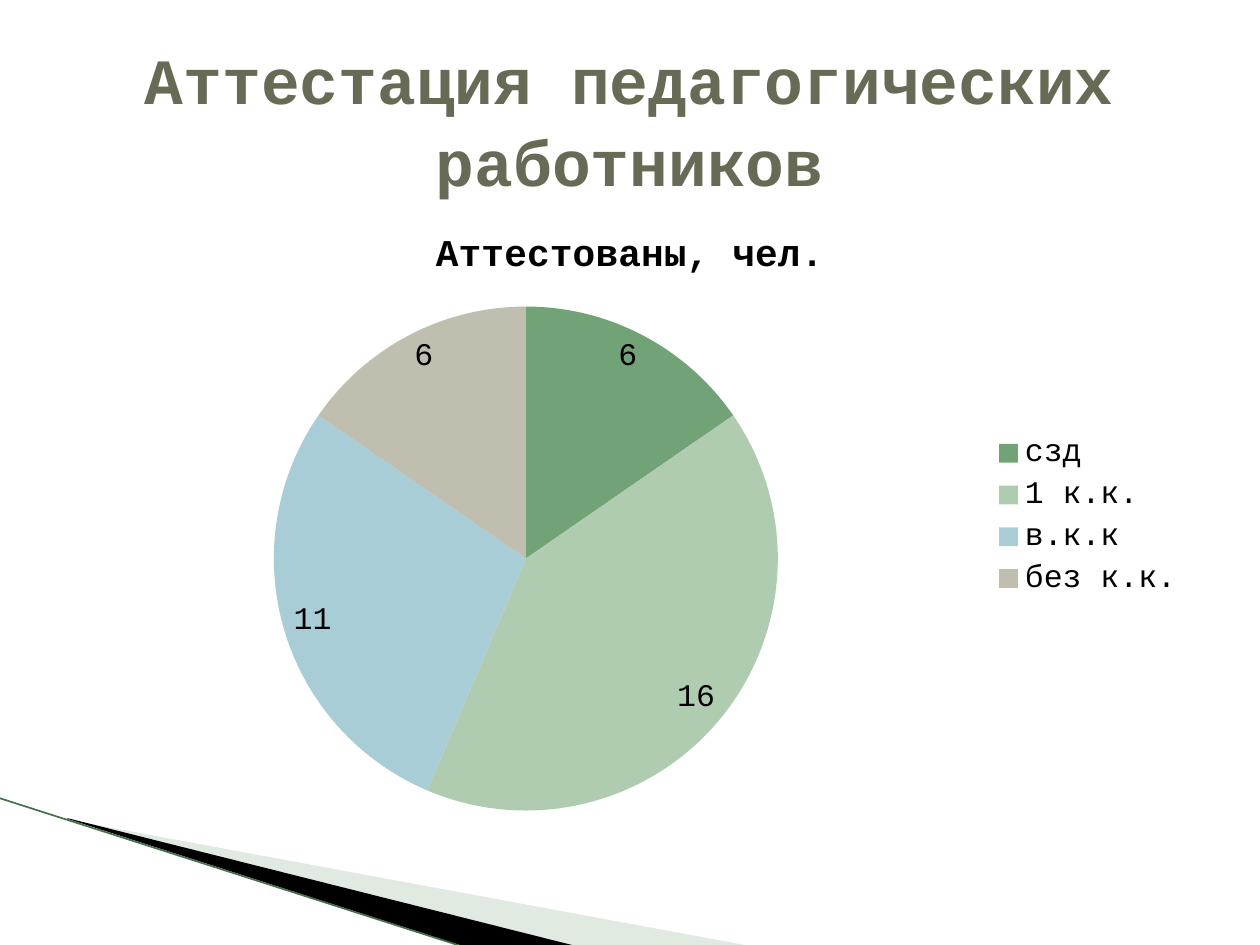
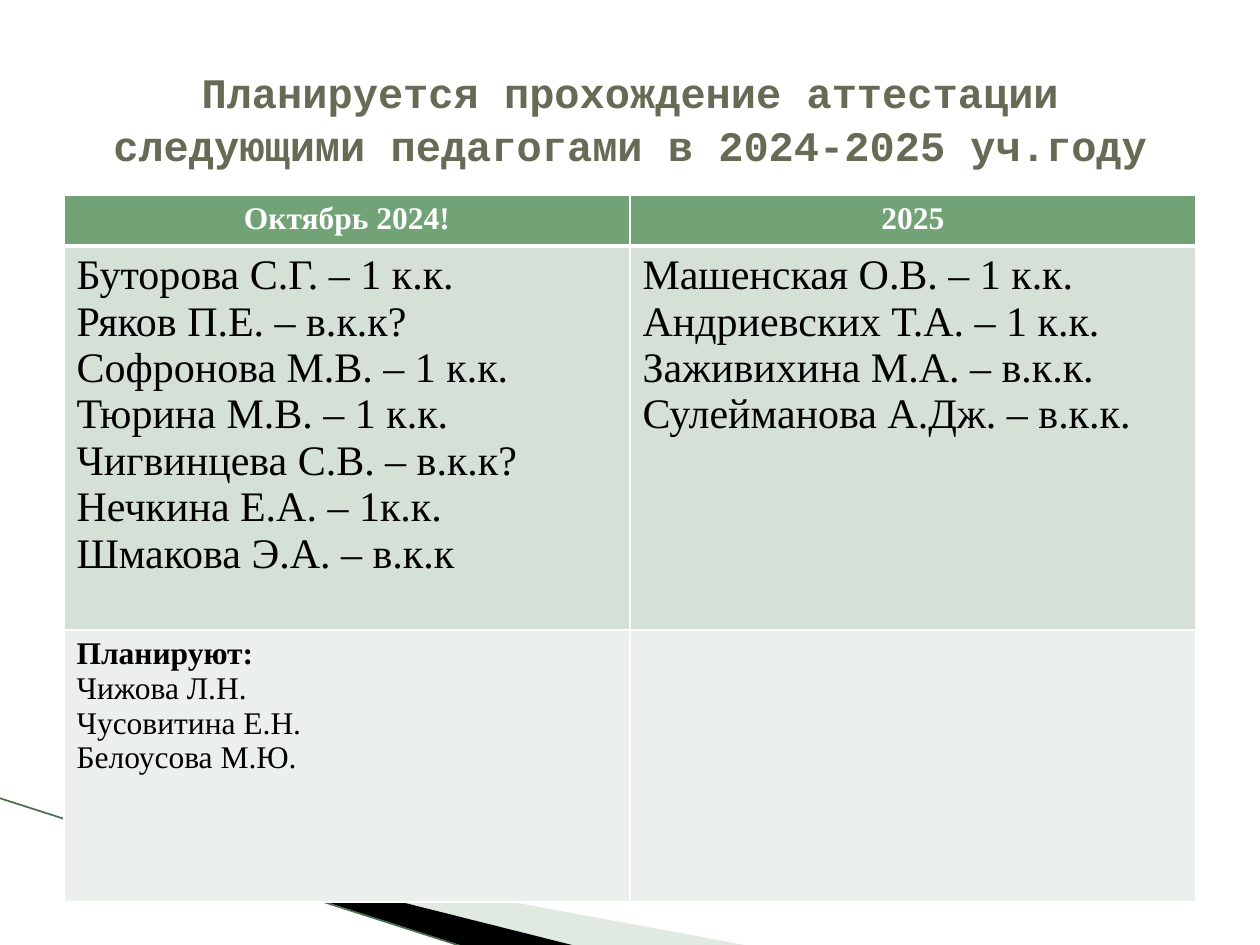
import dataclasses

import lxml.etree
import pptx
import pptx.chart.data
import pptx.dml.color
import pptx.enum.chart
import pptx.enum.text
import pptx.oxml.ns
import pptx.util

PX = 914400 / 126
ALIGN = pptx.enum.text.PP_ALIGN
qn = pptx.oxml.ns.qn


@dataclasses.dataclass(frozen=True)
class Theme:
    mono: str = "Courier New"
    serif: str = "Times New Roman"
    title: str = "676A55"
    text: str = "000000"
    white: str = "FFFFFF"
    green: str = "72A376"
    row_dark: str = "D5E0D6"
    row_light: str = "EBF0EC"
    wedge: str = "B3CBB5"
    edge: str = "45704A"
    slices: tuple = ("72A376", "B0CCB0", "A8CDD7", "C0BEAF")
    big: float = 36.9
    head: int = 24
    body: int = 18
    chart_title: float = 21.6


def px(n):
    return pptx.util.Emu(round(n * PX))


def rgb(color):
    return pptx.dml.color.RGBColor.from_string(color)


def sub(parent, tag, **attrs):
    return lxml.etree.SubElement(parent, qn(tag), attrs)


def set_attrs(obj, **values):
    for name, value in values.items():
        setattr(obj, name, value)


def set_font(font, name, size, color, bold=False):
    set_attrs(font, name=name, size=pptx.util.Pt(size), bold=bold)
    font.color.rgb = rgb(color)


class Deck:
    def __init__(self, theme):
        self.theme = theme
        self.prs = pptx.Presentation()
        set_attrs(self.prs, slide_width=px(1260), slide_height=px(945))

    def slide(self, title, size):
        t = self.theme
        self.s = self.prs.slides.add_slide(self.prs.slide_layouts[5])
        self.wedge([(69, 820), (750, 946), (575, 946), (69, 819)], t.wedge, 40)
        self.wedge([(67, 818), (576, 946), (469, 948), (68, 819)], t.text)
        self.line((-1, 798), (467, 948), t.edge, 0.95)
        sp = self.s.shapes.title
        set_attrs(sp, left=px(63), top=px(38), width=px(1134), height=px(158))
        tf = sp.text_frame
        set_attrs(tf, text=title, word_wrap=True,
                  auto_size=pptx.enum.text.MSO_AUTO_SIZE.NONE,
                  vertical_anchor=pptx.enum.text.MSO_ANCHOR.MIDDLE)
        p = tf.paragraphs[0]
        set_attrs(p, alignment=ALIGN.CENTER, line_spacing=1.06)
        set_font(p.runs[0].font, t.mono, size, t.title, True)

    def wedge(self, points, color, alpha=100):
        fb = self.s.shapes.build_freeform(*points[0], scale=PX)
        fb.add_line_segments(points[1:])
        sp = fb.convert_to_shape()
        sp.shadow.inherit = False
        sp.line.fill.background()
        sp.fill.solid()
        sp.fill.fore_color.rgb = rgb(color)
        if alpha < 100:
            clr = sp.fill._xPr.find(".//" + qn("a:srgbClr"))
            sub(clr, "a:alpha", val=str(alpha * 1000))

    def line(self, start, end, color, width):
        ends = [px(n) for n in start + end]
        ln = self.s.shapes.add_connector(
            pptx.enum.shapes.MSO_CONNECTOR.STRAIGHT, *ends)
        ln.line.color.rgb = rgb(color)
        ln.line.width = pptx.util.Pt(width)
        sub(ln._element.spPr, "a:effectLst")

    def pie(self, box, title, cats, vals):
        t = self.theme
        data = pptx.chart.data.CategoryChartData()
        data.categories = cats
        data.add_series(title, vals)
        chart = self.s.shapes.add_chart(
            pptx.enum.chart.XL_CHART_TYPE.PIE, *map(px, box), data).chart
        set_font(chart.font, t.mono, t.body, t.text)
        set_attrs(chart, has_title=True, has_legend=True)
        tf = chart.chart_title.text_frame
        tf.text = title
        set_font(tf.paragraphs[0].runs[0].font, t.mono, t.chart_title, t.text, True)
        set_attrs(chart.legend, include_in_layout=False,
                  position=pptx.enum.chart.XL_LEGEND_POSITION.RIGHT)
        plot = chart.plots[0]
        set_attrs(plot, vary_by_categories=True, has_data_labels=True)
        set_attrs(plot.data_labels, show_value=True, show_percentage=False,
                  position=pptx.enum.chart.XL_LABEL_POSITION.BEST_FIT)
        set_font(plot.data_labels.font, t.mono, t.body, t.text)
        for i, color in enumerate(t.slices):
            fill = plot.series[0].points[i].format.fill
            fill.solid()
            fill.fore_color.rgb = rgb(color)

    def table(self, left, top, widths, heights, rows, styles):
        shape = self.s.shapes.add_table(
            len(rows), len(widths), px(left), px(top),
            px(sum(widths)), px(sum(heights)))
        tbl = shape.table
        tbl.horz_banding = False
        for col, width in zip(tbl.columns, widths):
            col.width = px(width)
        for i, (row, height) in enumerate(zip(tbl.rows, heights)):
            row.height = px(height)
            for cell, lines in zip(row.cells, rows[i]):
                self.cell(cell, lines, **styles[i])
                self.borders(cell, top=3 if i == 1 else 1, bottom=3 if i == 0 else 1)

    def cell(self, cell, lines, fill, size, color, align, bold_first):
        cell.fill.solid()
        cell.fill.fore_color.rgb = rgb(fill)
        tf = cell.text_frame
        tf.text = "\n".join(lines)
        for i, p in enumerate(tf.paragraphs):
            p.alignment = align
            for r in p.runs:
                set_font(r.font, self.theme.serif, size, color, bold_first and i == 0)

    def borders(self, cell, top, bottom):
        tcPr = cell._tc.get_or_add_tcPr()
        sides = {"a:lnL": 1, "a:lnR": 1, "a:lnT": top, "a:lnB": bottom}
        for i, (tag, width) in enumerate(sides.items()):
            ln = sub(tcPr, tag, w=str(width * 12700))
            sub(sub(ln, "a:solidFill"), "a:srgbClr", val=self.theme.white)
            tcPr.insert(i, ln)


def main():
    t = Theme()
    deck = Deck(t)

    deck.slide("Аттестация педагогических работников", t.big)
    deck.pie((63, 204, 1134, 624), "Аттестованы, чел.",
             ["сзд", "1 к.к.", "в.к.к", "без к.к."], [6, 16, 11, 6])

    deck.slide("Планируется прохождение аттестации следующими педагогами "
               "в 2024-2025 уч.году", t.head)
    october = ["Буторова С.Г. – 1 к.к.", "Ряков П.Е. – в.к.к?",
               "Софронова М.В. – 1 к.к.", "Тюрина М.В. – 1 к.к.",
               "Чигвинцева С.В. – в.к.к?", "Нечкина Е.А. – 1к.к.",
               "Шмакова Э.А. – в.к.к"]
    next_year = ["Машенская О.В. – 1 к.к.", "Андриевских Т.А. – 1 к.к.",
                 "Заживихина М.А. – в.к.к.", "Сулейманова А.Дж. – в.к.к."]
    planning = ["Планируют:", "Чижова Л.Н.", "Чусовитина Е.Н.", "Белоусова М.Ю."]
    rows = [(["Октябрь 2024!"], ["2025"]), (october, next_year), (planning, [])]
    styles = [
        dict(fill=t.green, size=t.body, color=t.white, align=ALIGN.CENTER, bold_first=True),
        dict(fill=t.row_dark, size=t.head, color=t.text, align=ALIGN.LEFT, bold_first=False),
        dict(fill=t.row_light, size=t.body, color=t.text, align=ALIGN.LEFT, bold_first=True),
    ]
    deck.table(64, 195, [566, 566], [51, 384, 272], rows, styles)

    deck.prs.save("out.pptx")


if __name__ == "__main__":
    main()
